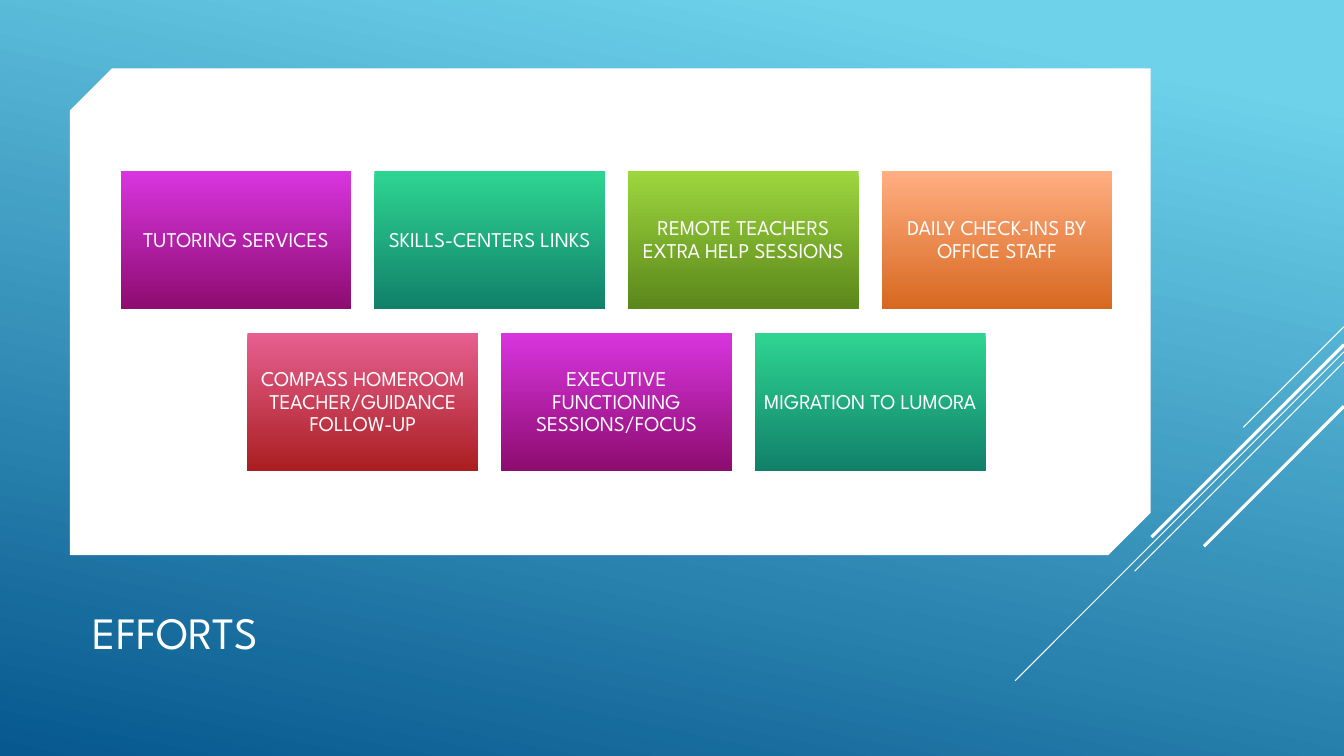
import pptx
import pptx.dml.color
import pptx.enum.shapes
import pptx.enum.text
import pptx.oxml.ns
import pptx.util
from dataclasses import dataclass
from lxml import etree

Pt = pptx.util.Pt
SHAPES = pptx.enum.shapes.MSO_SHAPE
ANCHOR = pptx.enum.text.MSO_ANCHOR
ALIGN = pptx.enum.text.PP_ALIGN


@dataclass(frozen=True)
class Theme:
    font: str = "League Spartan"
    title_size: float = 32
    tile_size: float = 15
    white: str = "FFFFFF"
    backdrop: tuple = ("6ED2EB", "06588E")
    tiles: tuple = (
        ("D835DF", "8D0C6F"),
        ("2ED592", "11806A"),
        ("9DD63D", "5B871B"),
        ("FFAE82", "D7681F"),
        ("E66091", "AA1E1F"),
    )


THEME = Theme()
SLIDE_WIDTH, SLIDE_HEIGHT = 960, 540
TILE_WIDTH, TILE_HEIGHT = 164.8, 98.8
COLUMN_PITCH, ROW_PITCH = 181.2, 115.6
TILES_CENTRE, TILES_TOP = 440.4, 122.3

EFFORT_ROWS = (
    (
        "TUTORING SERVICES",
        "SKILLS-CENTERS LINKS",
        "REMOTE TEACHERS EXTRA HELP SESSIONS",
        "DAILY CHECK-INS BY OFFICE STAFF",
    ),
    (
        "COMPASS HOMEROOM TEACHER/GUIDANCE FOLLOW-UP",
        "EXECUTIVE FUNCTIONING SESSIONS/FOCUS",
        "MIGRATION TO LUMORA",
    ),
)
STREAKS = (
    (233.3, 72, 0.75),
    (251.3, 235, 0.75),
    (258.5, 149.5, 0.75),
    (246.2, 137.5, 2.25),
    (290.2, 100, 2.25),
)


def rgb(code):
    return pptx.dml.color.RGBColor.from_string(code)


def apply(target, values):
    for name, value in values.items():
        setattr(target, name, value)


def add_block(slide, preset, left, top, width, height):
    block = slide.shapes.add_shape(preset, Pt(left), Pt(top), Pt(width), Pt(height))
    block.shadow.inherit = False
    block.line.fill.background()
    return block


def fill_gradient(block, colours, start=0, angle=270):
    block.fill.gradient()
    block.fill.gradient_angle = angle
    for stop, colour, position in zip(block.fill.gradient_stops, colours, (start, 1)):
        stop.color.rgb = rgb(colour)
        stop.position = position


def write(shape, wording, size, frame_format, paragraph_format):
    frame = shape.text_frame
    frame.text = wording
    apply(frame, {"word_wrap": True, **frame_format})
    paragraph = frame.paragraphs[0]
    apply(paragraph, paragraph_format)
    font = paragraph.runs[0].font
    apply(font, {"name": THEME.font, "size": Pt(size)})
    font.color.rgb = rgb(THEME.white)


def add_backdrop(slide):
    backdrop = add_block(slide, SHAPES.RECTANGLE, 0, 0, SLIDE_WIDTH, SLIDE_HEIGHT)
    fill_gradient(backdrop, THEME.backdrop, start=0.1, angle=258)


def place_title(slide, wording):
    title = slide.shapes.title
    apply(title, {"left": Pt(59), "top": Pt(408.2), "width": Pt(685.4), "height": Pt(66.2)})
    write(
        title,
        wording,
        THEME.title_size,
        {"vertical_anchor": ANCHOR.BOTTOM},
        {"alignment": ALIGN.LEFT, "line_spacing": 0.9},
    )
    slide.shapes.element.append(title.element)


def add_panel(slide):
    panel = add_block(slide, SHAPES.SNIP_2_DIAG_RECTANGLE, 49.9, 48.8, 772, 347.8)
    panel.adjustments[0] = 0.087
    panel.adjustments[1] = 0
    panel.fill.solid()
    panel.fill.fore_color.rgb = rgb(THEME.white)


def add_streak(slide, top, run, weight):
    streak = slide.shapes.add_connector(
        pptx.enum.shapes.MSO_CONNECTOR.STRAIGHT,
        Pt(SLIDE_WIDTH), Pt(top), Pt(SLIDE_WIDTH - run), Pt(top + run),
    )
    streak.line.width = Pt(weight)
    streak.line.color.rgb = rgb(THEME.white)
    etree.SubElement(streak.element.spPr, pptx.oxml.ns.qn("a:effectLst"))


def add_tile(slide, wording, left, top, colours):
    tile = add_block(slide, SHAPES.RECTANGLE, left, top, TILE_WIDTH, TILE_HEIGHT)
    fill_gradient(tile, colours)
    insets = {f"margin_{side}": Pt(4.5) for side in ("left", "right", "top", "bottom")}
    write(
        tile,
        wording,
        THEME.tile_size,
        {"vertical_anchor": ANCHOR.MIDDLE, **insets},
        {"alignment": ALIGN.CENTER, "line_spacing": 0.9},
    )


def add_tiles(slide):
    position = 0
    for row, efforts in enumerate(EFFORT_ROWS):
        row_width = (len(efforts) - 1) * COLUMN_PITCH + TILE_WIDTH
        row_left = TILES_CENTRE - row_width / 2
        for column, effort in enumerate(efforts):
            colours = THEME.tiles[position % len(THEME.tiles)]
            left = row_left + column * COLUMN_PITCH
            add_tile(slide, effort, left, TILES_TOP + row * ROW_PITCH, colours)
            position += 1


def main():
    deck = pptx.Presentation()
    apply(deck, {"slide_width": Pt(SLIDE_WIDTH), "slide_height": Pt(SLIDE_HEIGHT)})
    slide = deck.slides.add_slide(deck.slide_layouts[5])
    add_backdrop(slide)
    place_title(slide, "EFFORTS")
    add_panel(slide)
    for streak in STREAKS:
        add_streak(slide, *streak)
    add_tiles(slide)
    deck.save("out.pptx")


if __name__ == "__main__":
    main()
